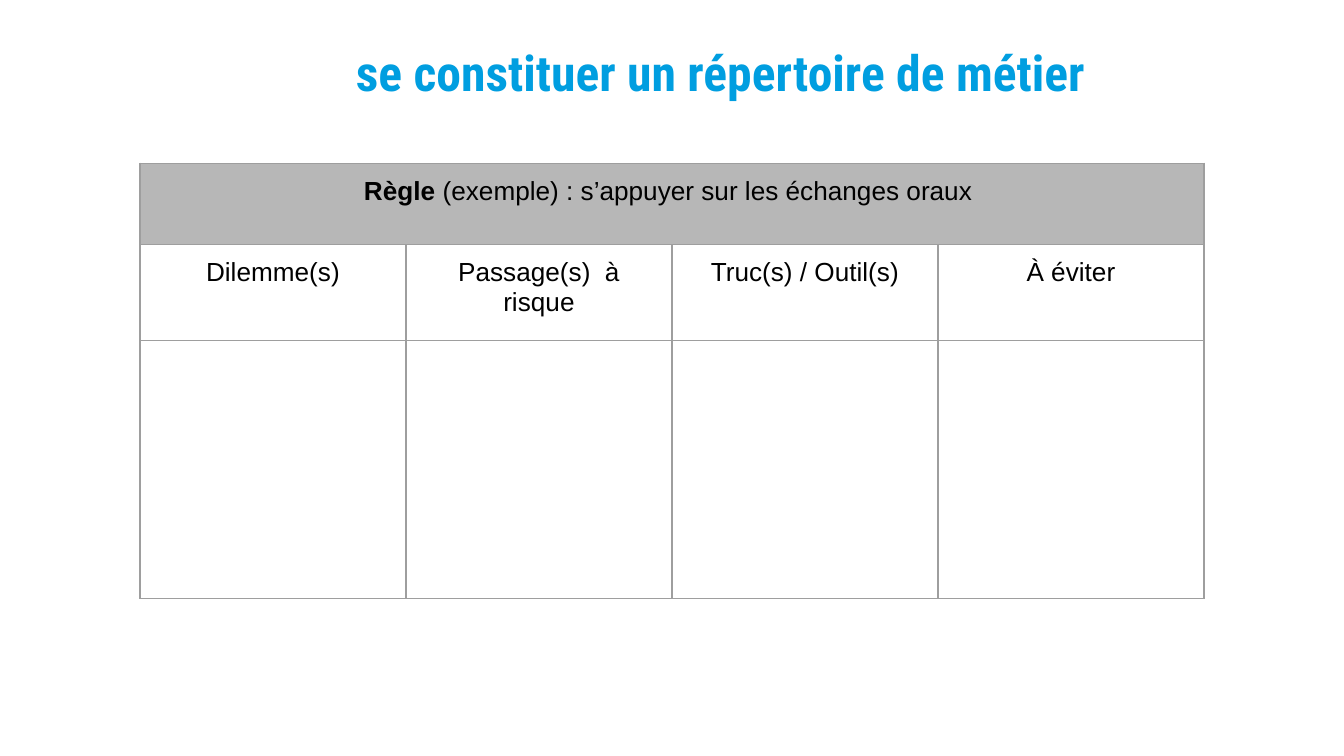
from dataclasses import dataclass

import lxml.etree
import pptx
import pptx.dml.color
import pptx.enum.text
import pptx.oxml.ns
import pptx.util

Pt = pptx.util.Pt
RGBColor = pptx.dml.color.RGBColor
Anchor = pptx.enum.text.MSO_ANCHOR

BLUE = RGBColor(0x00, 0x9E, 0xE0)
BLACK = RGBColor(0x00, 0x00, 0x00)
HEADER_GREY = RGBColor(0xB7, 0xB7, 0xB7)
BORDER_GREY = RGBColor(0x9E, 0x9E, 0x9E)

COLUMN_WIDTH = 142.5
ROW_HEIGHTS = (43.75, 51.25, 138.25)
CELL_MARGIN = 7.2


@dataclass(frozen=True)
class Heading:
    column: int
    text: str


HEADINGS = [
    Heading(0, "Dilemme(s)"),
    Heading(1, "Passage(s)  à risque"),
    Heading(2, "Truc(s) / Outil(s)"),
    Heading(3, "À éviter"),
]


def add_text(paragraph, text: str, *, size: float = 14, font: str = "Arial",
             color: RGBColor = BLACK, bold: bool = False) -> None:
    """Append a formatted run to a centred paragraph."""
    paragraph.alignment = pptx.enum.text.PP_ALIGN.CENTER
    run = paragraph.add_run()
    run.text = text
    run.font.size = Pt(size)
    run.font.name = font
    run.font.color.rgb = color
    run.font.bold = bold


def add_borders(cell, color: RGBColor, width: float) -> None:
    qn = pptx.oxml.ns.qn
    properties = cell._tc.get_or_add_tcPr()
    for side in ("a:lnL", "a:lnR", "a:lnT", "a:lnB"):
        line = lxml.etree.SubElement(properties, qn(side), w=str(Pt(width)))
        fill = lxml.etree.SubElement(line, qn("a:solidFill"))
        lxml.etree.SubElement(fill, qn("a:srgbClr"), val=str(color))


def add_title(slide) -> None:
    title = slide.shapes.title
    title.left, title.top = Pt(103.7), Pt(4.3)
    title.width, title.height = Pt(565.2), Pt(67.7)
    title.text_frame.vertical_anchor = Anchor.MIDDLE
    add_text(title.text_frame.paragraphs[0], "se constituer un répertoire de métier",
             size=26.6, font="Roboto Condensed", color=BLUE, bold=True)


def add_repertoire(slide) -> None:
    columns = len(HEADINGS)
    repertoire = slide.shapes.add_table(
        len(ROW_HEIGHTS), columns, Pt(75), Pt(87.4),
        Pt(COLUMN_WIDTH * columns), Pt(sum(ROW_HEIGHTS))).table
    repertoire.first_row = False
    repertoire.horz_banding = False
    for column in repertoire.columns:
        column.width = Pt(COLUMN_WIDTH)
    for row, height in zip(repertoire.rows, ROW_HEIGHTS):
        row.height = Pt(height)

    for cell in repertoire.iter_cells():
        cell.margin_left = cell.margin_right = Pt(CELL_MARGIN)
        cell.margin_top = cell.margin_bottom = Pt(CELL_MARGIN)
        cell.vertical_anchor = Anchor.TOP
        add_borders(cell, BORDER_GREY, 0.75)
        cell.fill.background()

    rule = repertoire.cell(0, 0)
    rule.merge(repertoire.cell(0, columns - 1))
    rule.fill.solid()
    rule.fill.fore_color.rgb = HEADER_GREY
    rule_line = rule.text_frame.paragraphs[0]
    add_text(rule_line, "Règle", bold=True)
    add_text(rule_line, " (exemple) : s’appuyer sur les échanges oraux ")

    for heading in HEADINGS:
        cell = repertoire.cell(1, heading.column)
        add_text(cell.text_frame.paragraphs[0], heading.text)


def main() -> None:
    presentation = pptx.Presentation()
    presentation.slide_width = Pt(720)
    presentation.slide_height = Pt(405)
    slide = presentation.slides.add_slide(presentation.slide_layouts[5])
    add_title(slide)
    add_repertoire(slide)
    presentation.save("out.pptx")


if __name__ == "__main__":
    main()
